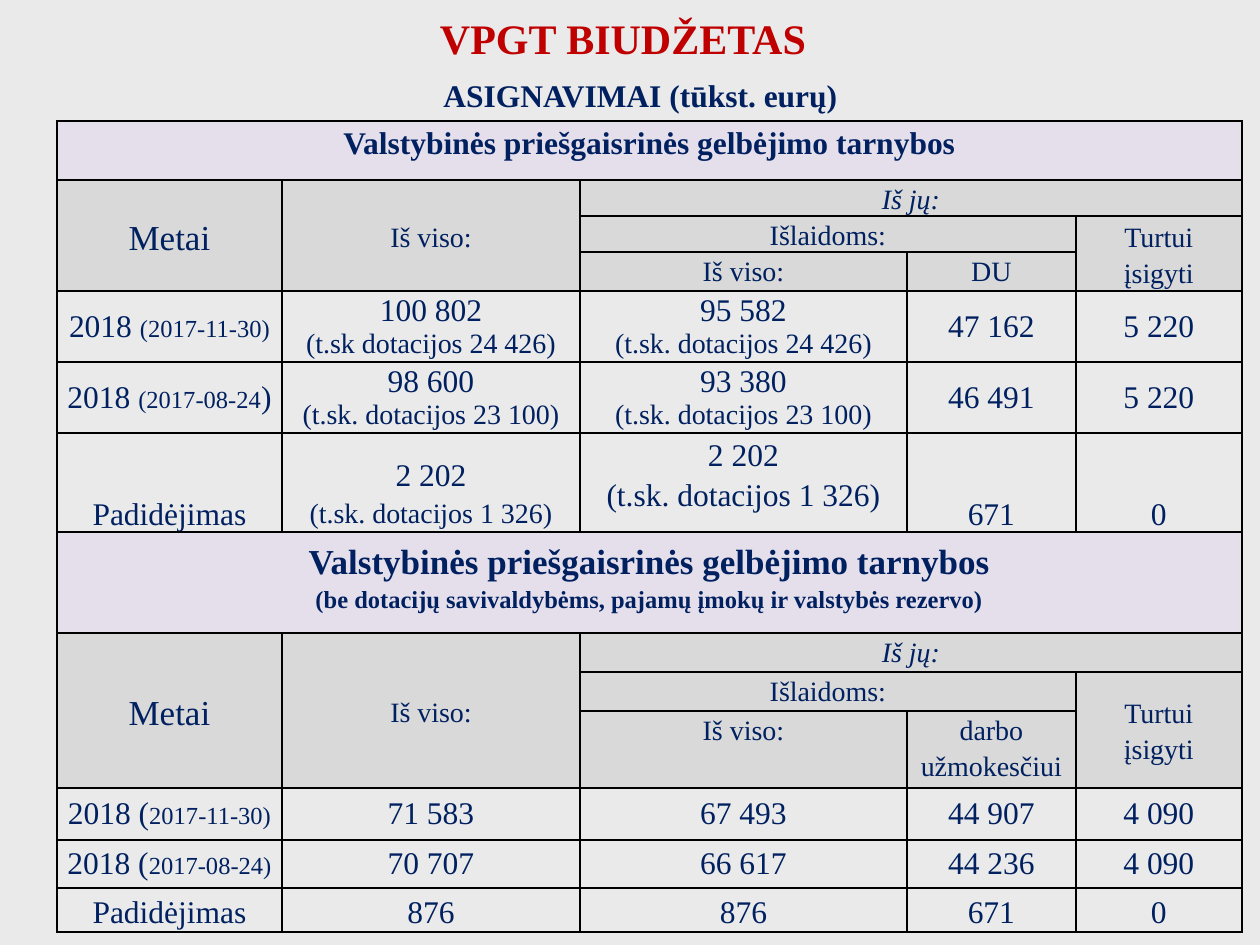
from dataclasses import dataclass
from typing import NamedTuple

from lxml.etree import SubElement
from pptx import Presentation
from pptx.dml.color import RGBColor
from pptx.enum.text import MSO_ANCHOR, PP_ALIGN
from pptx.oxml.ns import qn
from pptx.util import Emu, Pt

FONT = "Times New Roman"
NAVY, RED, BLACK = "002060", "C00000", "000000"
PAGE_GREY, HEAD_GREY, LILAC = "EAEAEA", "D9D9D9", "E5DFEC"
TOP, MIDDLE = MSO_ANCHOR.TOP, MSO_ANCHOR.MIDDLE
COLUMNS = [225, 298, 327, 169, 166]
TABLE_LEFT = 57
HEADING_ROWS = range(1, 4)
THICK_ROW = 5  # the row with a heavier rule below it


class Span(NamedTuple):
    text: str
    size: int = 18


Lines = list[list[Span]]


@dataclass
class Entry:
    row: int
    column: int
    lines: Lines
    rows: int = 1
    columns: int = 1
    anchor: MSO_ANCHOR = MIDDLE
    spacing: float = 1.15
    side: int = 9
    bottom: int = 0
    bold: bool = False
    italic: bool = False


@dataclass
class BudgetTable:
    top: int
    heights: list[int]
    entries: list[Entry]


def px(length: int) -> Emu:
    return Emu(round(length * 914400 / 126))


def colour(value: str) -> RGBColor:
    return RGBColor.from_string(value)


def line(text: str, size: int = 18) -> list[Span]:
    return [Span(text, size)]


def write_text(frame, lines: Lines, *, tint: str = NAVY, bold: bool = False,
               italic: bool = False, spacing: float = 1.0,
               align: PP_ALIGN = PP_ALIGN.CENTER) -> None:
    for index, spans in enumerate(lines):
        para = frame.add_paragraph() if index else frame.paragraphs[0]
        para.alignment = align
        para.line_spacing = spacing
        for span in spans:
            run = para.add_run()
            run.text = span.text
            run.font.name = FONT
            run.font.size = Pt(span.size)
            run.font.bold = bold
            run.font.italic = italic
            run.font.color.rgb = colour(tint)


def draw_borders(cell, top: float, bottom: float) -> None:
    properties = cell._tc.get_or_add_tcPr()
    widths = {"a:lnL": 1, "a:lnR": 1, "a:lnT": top, "a:lnB": bottom}
    for position, (tag, width) in enumerate(widths.items()):
        edge = SubElement(properties, qn(tag), w=str(Pt(width)))
        fill = SubElement(edge, qn("a:solidFill"))
        SubElement(fill, qn("a:srgbClr"), val=BLACK)
        properties.insert(position, edge)  # borders come before the fill


def draw_table(page, budget: BudgetTable) -> None:
    heights = budget.heights
    frame = page.shapes.add_table(
        len(heights), len(COLUMNS), px(TABLE_LEFT), px(budget.top),
        px(sum(COLUMNS)), px(sum(heights)))
    table = frame.table
    table.first_row = table.horz_banding = False
    for column, width in zip(table.columns, COLUMNS):
        column.width = px(width)
    for row, height in zip(table.rows, heights):
        row.height = px(height)

    # Fills and rules
    for row in range(len(heights)):
        for column in range(len(COLUMNS)):
            cell = table.cell(row, column)
            cell.margin_left = cell.margin_right = 0
            cell.margin_top = cell.margin_bottom = 0
            if row == 0 or row in HEADING_ROWS:
                cell.fill.solid()
                cell.fill.fore_color.rgb = colour(HEAD_GREY if row else LILAC)
            else:
                cell.fill.background()
            draw_borders(cell, 1.5 if row == THICK_ROW + 1 else 1,
                         1.5 if row == THICK_ROW else 1)

    # Wording
    for entry in budget.entries:
        cell = table.cell(entry.row, entry.column)
        if entry.rows * entry.columns > 1:
            cell.merge(table.cell(entry.row + entry.rows - 1,
                                  entry.column + entry.columns - 1))
        cell.margin_left = cell.margin_right = px(entry.side)
        cell.margin_bottom = px(entry.bottom)
        cell.vertical_anchor = entry.anchor
        write_text(cell.text_frame, entry.lines, bold=entry.bold,
                   italic=entry.italic, spacing=entry.spacing)


def heading_entries(pay_label: str) -> list[Entry]:
    return [
        Entry(1, 0, [line("Metai", 20)], rows=3),
        Entry(1, 1, [line("Iš viso:", 16)], rows=3),
        Entry(1, 2, [line("Iš jų:", 16)], columns=3, anchor=TOP, italic=True),
        Entry(2, 2, [line("Išlaidoms:", 16)], columns=2, anchor=TOP),
        Entry(2, 4, [line("Turtui", 16), line("įsigyti", 16)], rows=2),
        Entry(3, 2, [line("Iš viso:", 16)], anchor=TOP),
        Entry(3, 3, [line(pay_label, 16)], anchor=TOP),
    ]


def year_entries(row: int, year: list[Span], *amounts: Lines) -> list[Entry]:
    return [Entry(row, column, lines, spacing=1.0, side=1)
            for column, lines in enumerate([[year], *amounts])]


def figures(*values: str) -> list[Lines]:
    return [[line(value)] for value in values]


def with_grant(amount: str, grant: str, size: int = 16) -> Lines:
    return [line(amount), line(grant, size)]


SERVICE = "Valstybinės priešgaisrinės gelbėjimo tarnybos"

FULL_BUDGET = BudgetTable(121, [59, 36, 36, 39, 71, 71, 159], [
    Entry(0, 0, [line(SERVICE)], columns=5, anchor=TOP, bold=True),
    *heading_entries("DU"),
    *year_entries(4, [Span("2018 "), Span("(2017-11-30)", 14)],
                  with_grant("100 802", "(t.sk dotacijos 24 426)"),
                  with_grant("95 582", "(t.sk. dotacijos 24 426)"),
                  *figures("47 162", "5 220")),
    *year_entries(5, [Span("2018 "), Span("(2017-08-24", 14), Span(")")],
                  with_grant("98 600", "(t.sk. dotacijos 23 100)"),
                  with_grant("93 380", "(t.sk. dotacijos 23 100)"),
                  *figures("46 491", "5 220")),
    Entry(6, 0, [line("Padidėjimas")]),
    Entry(6, 1, with_grant("2 202", "(t.sk. dotacijos 1 326)"), bottom=42),
    Entry(6, 2, with_grant("2 202", "(t.sk. dotacijos 1 326)", 18), anchor=TOP),
    Entry(6, 3, [line("671")]),
    Entry(6, 4, [line("0")]),
])

OWN_BUDGET = BudgetTable(532, [101, 39, 39, 77, 52, 48, 44], [
    Entry(0, 0, [line(SERVICE, 20),
                 line("(be dotacijų savivaldybėms, pajamų įmokų ir valstybės rezervo)", 14)],
          columns=5, bottom=14, bold=True),
    *heading_entries("darbo užmokesčiui"),
    *year_entries(4, [Span("2018 ("), Span("2017-11-30)", 14)],
                  *figures("71 583", "67 493", "44 907", "4 090")),
    *year_entries(5, [Span("2018 ("), Span("2017-08-24)", 14)],
                  *figures("70 707", "66 617", "44 236", "4 090")),
    *[Entry(6, column, lines) for column, lines in
      enumerate(figures("Padidėjimas", "876", "876", "671", "0"))],
])


def main() -> None:
    deck = Presentation()
    deck.slide_width, deck.slide_height = px(1260), px(945)
    page = deck.slides.add_slide(deck.slide_layouts[5])
    page.background.fill.solid()
    page.background.fill.fore_color.rgb = colour(PAGE_GREY)

    # Title
    title = page.shapes.title
    title.left, title.top, title.width, title.height = map(px, (52, 6, 1142, 63))
    title.text_frame.vertical_anchor = TOP
    write_text(title.text_frame, [line("VPGT BIUDŽETAS", 24)], tint=RED, bold=True)

    # Budget tables
    for budget in (FULL_BUDGET, OWN_BUDGET):
        draw_table(page, budget)

    # Subtitle
    box = page.shapes.add_textbox(*map(px, (431, 70, 423, 51)))
    box.text_frame.word_wrap = False
    write_text(box.text_frame, [line("ASIGNAVIMAI (tūkst. eurų)")], bold=True,
               align=PP_ALIGN.LEFT)

    deck.save("out.pptx")


if __name__ == "__main__":
    main()
